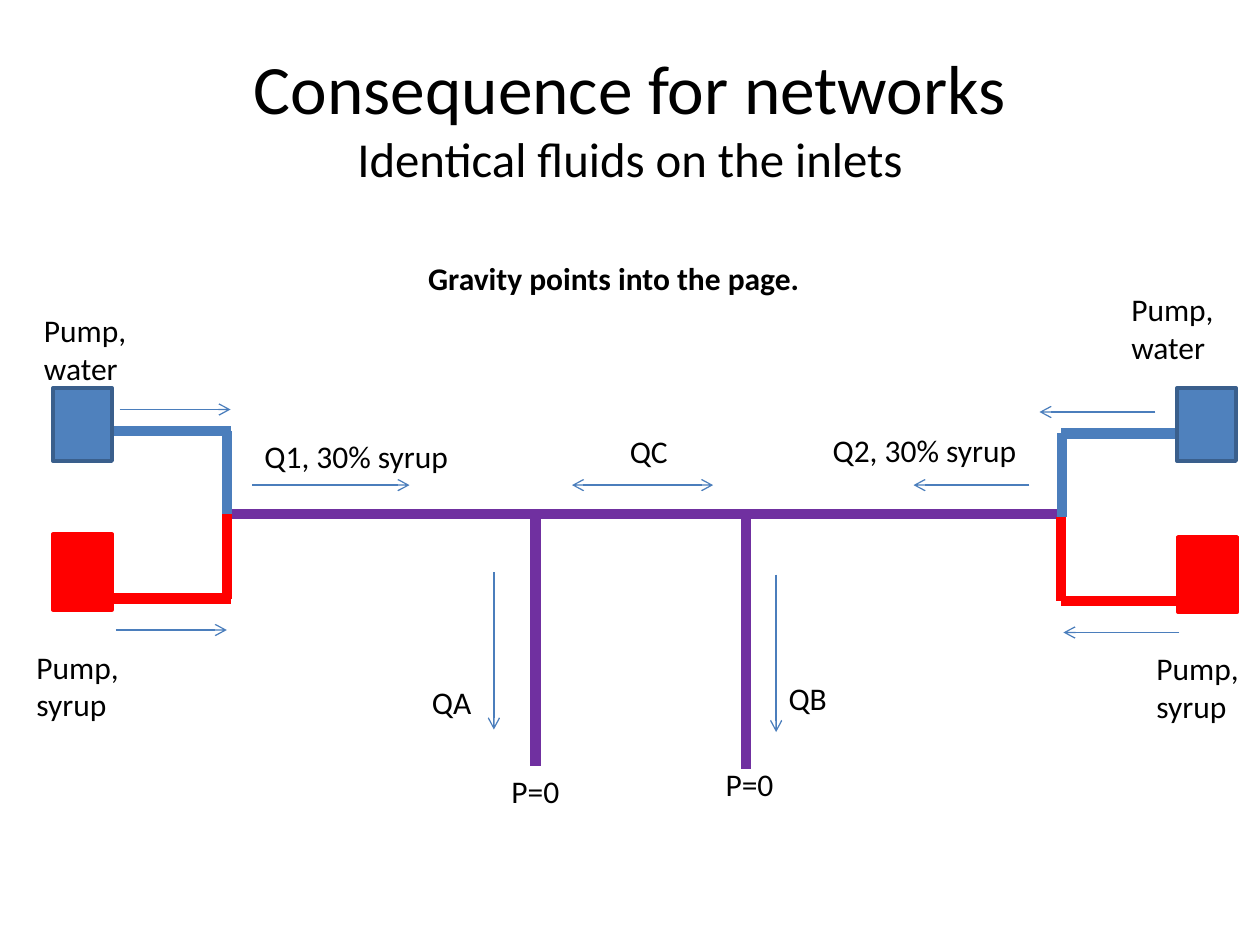
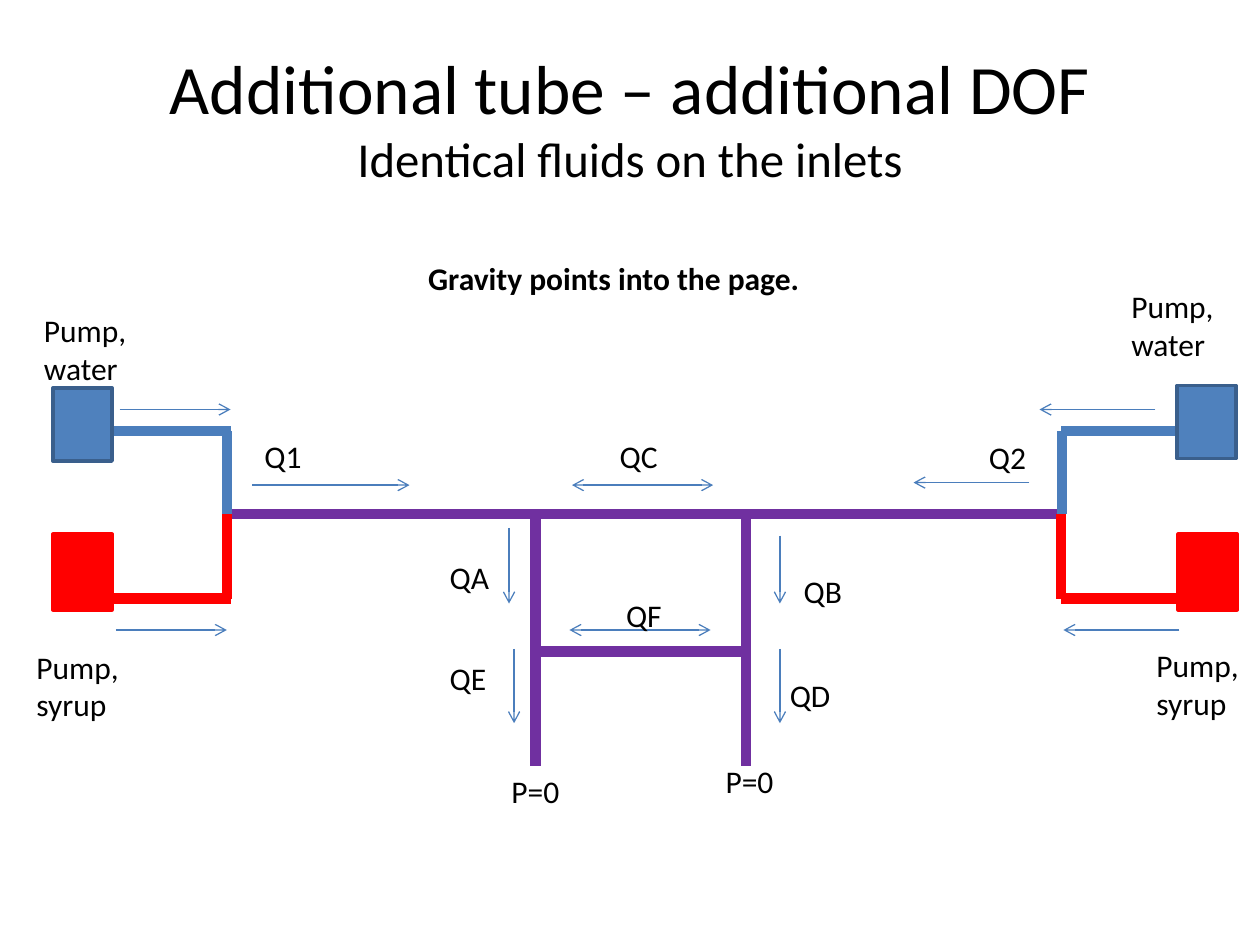
import dataclasses

import pptx
import pptx.util
import pptx.dml.color
import pptx.enum.shapes
import pptx.enum.text
import pptx.oxml
import pptx.oxml.ns

Inches = pptx.util.Inches
Pt = pptx.util.Pt
Align = pptx.enum.text.PP_ALIGN


@dataclasses.dataclass(frozen=True)
class Theme:
    font: str = "Calibri"
    ink: str = "000000"
    flow: str = "4B7EBC"
    water: str = "4F81BD"
    edge: str = "3A5F8C"
    syrup: str = "FF0000"
    blend: str = "7030A0"
    title: float = 39.6
    lower: float = 27.9
    label: float = 18
    tube: float = 6
    thin: float = 0.75
    rim: float = 2


@dataclasses.dataclass(frozen=True)
class Side:
    """Places of one pair of inlets: pumps, pipes, flow arrows and labels."""
    pumps: tuple
    pipe: tuple
    risers: tuple
    flows: tuple
    labels: tuple


LEFT = Side(pumps=((0.42, 3.08), (0.42, 4.24)), pipe=(0.89, 1.83),
            risers=(1.8, 1.8), flows=((0.95, 1.83), (0.92, 1.8)),
            labels=((0.25, 2.42), (0.19, 5.09)))
RIGHT = Side(pumps=((9.34, 3.06), (9.35, 4.24)), pipe=(9.36, 8.42),
             risers=(8.43, 8.42), flows=((9.17, 8.25), (9.36, 8.44)),
             labels=((8.88, 2.23), (9.08, 5.08)))
MAIN = 4.08   # height of the main tube
WATER, SYRUP = 3.42, 4.75   # heights of the inlet pipes
OUTS = (4.25, 5.92)   # places of the two outlet tubes


def color(code):
    return pptx.dml.color.RGBColor.from_string(code)


def apply(target, form):
    for key, value in form.items():
        setattr(target, key, value)


class Pen:
    def __init__(self, deck, theme):
        self.deck, self.theme, self.slide = deck, theme, None

    def page(self, title):
        self.slide = self.deck.slides.add_slide(self.deck.slide_layouts[6])
        look = self.theme
        frame = self.slide.shapes.add_textbox(
            Inches(0.5), Inches(0.3), Inches(9), Inches(1.25)).text_frame
        apply(frame, {"word_wrap": True,
                      "vertical_anchor": pptx.enum.text.MSO_ANCHOR.MIDDLE})
        par = frame.paragraphs[0]
        par.alignment = Align.CENTER
        self.run(par, title, look.title)
        par.add_line_break()
        self.run(par, "Identical fluids on the inlets", look.lower)
        self.label("Gravity points into the page.", 3.3, 2.01, 3.19, bold=True)

    def run(self, par, text, size, bold=False):
        run = par.add_run()
        run.text = text
        apply(run.font, {"name": self.theme.font, "size": Pt(size), "bold": bold})
        run.font.color.rgb = color(self.theme.ink)

    def label(self, text, left, top, width=0.51, bold=False):
        lines = text.split("\n")
        height = 0.4 if len(lines) == 1 else 0.71
        frame = self.slide.shapes.add_textbox(
            Inches(left), Inches(top), Inches(width), Inches(height)).text_frame
        apply(frame, {"word_wrap": False,
                      "auto_size": pptx.enum.text.MSO_AUTO_SIZE.SHAPE_TO_FIT_TEXT})
        for i, line in enumerate(lines):
            par = frame.add_paragraph() if i else frame.paragraphs[0]
            self.run(par, line, self.theme.label, bold)

    def line(self, start, end, tint, width, heads=()):
        link = self.slide.shapes.add_connector(
            pptx.enum.shapes.MSO_CONNECTOR.STRAIGHT,
            *(Inches(v) for v in (*start, *end)))
        link.line.color.rgb = color(tint)
        link.line.width = Pt(width)
        stroke = link.line._get_or_add_ln()
        for head in heads:
            part = pptx.oxml.ns.qn(f"a:{head}")
            stroke.append(stroke.makeelement(part, {"type": "arrow"}))
        props = link._element.spPr
        props.append(props.makeelement(pptx.oxml.ns.qn("a:effectLst"), {}))

    def tube(self, start, end, tint):
        self.line(start, end, tint, self.theme.tube)

    def flow(self, start, end, both=False):
        heads = ("headEnd", "tailEnd") if both else ("tailEnd",)
        self.line(start, end, self.theme.flow, self.theme.thin, heads)

    def pump(self, left, top, height, fill, edge):
        box = self.slide.shapes.add_shape(
            pptx.enum.shapes.MSO_SHAPE.RECTANGLE,
            Inches(left), Inches(top), Inches(0.47), Inches(height))
        box.shadow.inherit = False
        box.fill.solid()
        box.fill.fore_color.rgb = color(fill)
        box.line.color.rgb = color(edge)
        box.line.width = Pt(self.theme.rim)

    def inlet(self, side, drop=0):
        """Draw the water and syrup feeds of one side, lowered by drop."""
        look = self.theme
        kinds = (("water", WATER, 3.25, 0.58, look.flow, look.water, look.edge),
                 ("syrup", SYRUP, 5, 0.6, look.syrup, look.syrup, look.syrup))
        for i, (name, pipe, flow, height, tint, fill, edge) in enumerate(kinds):
            near, far = side.pipe
            riser = side.risers[i]
            start, end = side.flows[i]
            left, top = side.pumps[i]
            self.tube((near, pipe + drop), (far, pipe + drop), tint)
            ends = sorted((pipe + drop, MAIN + drop))
            self.tube((riser, ends[0]), (riser, ends[1]), tint)
            self.flow((start, flow + drop), (end, flow + drop))
            self.pump(left, top + drop, height, fill, edge)
            left, top = side.labels[i]
            self.label(f"Pump,\n{name}", left, top + drop, 0.92)

    def net(self, drop=0):
        """Draw the main tube, both inlets, both outlets and shared flows."""
        tint = self.theme.blend
        self.tube((1.77, MAIN), (8.43, MAIN), tint)
        for side, fall in ((LEFT, 0), (RIGHT, drop)):
            self.inlet(side, fall)
        for x, fall in zip(OUTS, (0, drop)):
            self.tube((x, MAIN), (x, 6.08 + fall), tint)
        self.label("P=0", 3.96, 6.08, 0.59)
        self.label("P=0", 5.66, 6 + drop, 0.59)
        self.flow((2, 3.85), (3.25, 3.85))
        self.flow((8.17, 3.83 + drop), (7.25, 3.83 + drop))
        self.flow((4.54, 3.85), (5.66, 3.85), both=True)


def basic(pen):
    pen.page("Consequence for networks")
    pen.net(drop=0.02)
    pen.flow((3.92, 4.54), (3.92, 5.79))
    pen.flow((6.16, 4.56), (6.16, 5.81))
    for text, left, top, width in (("Q1, 30% syrup", 2, 3.42, 1.68),
                                   ("Q2, 30% syrup", 6.51, 3.37, 1.68),
                                   ("QA", 3.33, 5.37, 0.52),
                                   ("QB", 6.16, 5.34, 0.51),
                                   ("QC", 4.9, 3.38, 0.51)):
        pen.label(text, left, top, width)


def bridged(pen):
    pen.page("Additional tube – additional DOF")
    pen.net()
    pen.tube((OUTS[0], 5.17), (OUTS[1], 5.17), pen.theme.blend)
    pen.flow((4.52, 5), (5.64, 5), both=True)
    for x, top, end in ((4.04, 4.19, 4.79), (6.19, 4.25, 4.79),
                        (4.08, 5.15, 5.74), (6.19, 5.15, 5.74)):
        pen.flow((x, top), (x, end))
    for text, left, top, width in (("Q1", 2, 3.42, 0.5), ("Q2", 7.75, 3.43, 0.5),
                                   ("QA", 3.47, 4.38, 0.52),
                                   ("QB", 6.28, 4.49, 0.51),
                                   ("QC", 4.82, 3.42, 0.51),
                                   ("QD", 6.17, 5.32, 0.53),
                                   ("QE", 3.47, 5.18, 0.49),
                                   ("QF", 4.87, 4.68, 0.49)):
        pen.label(text, left, top, width)


def main():
    deck = pptx.Presentation()
    apply(deck, {"slide_width": Inches(10), "slide_height": Inches(7.5)})
    pen = Pen(deck, Theme())
    basic(pen)
    bridged(pen)
    deck.save("out.pptx")


if __name__ == "__main__":
    main()
